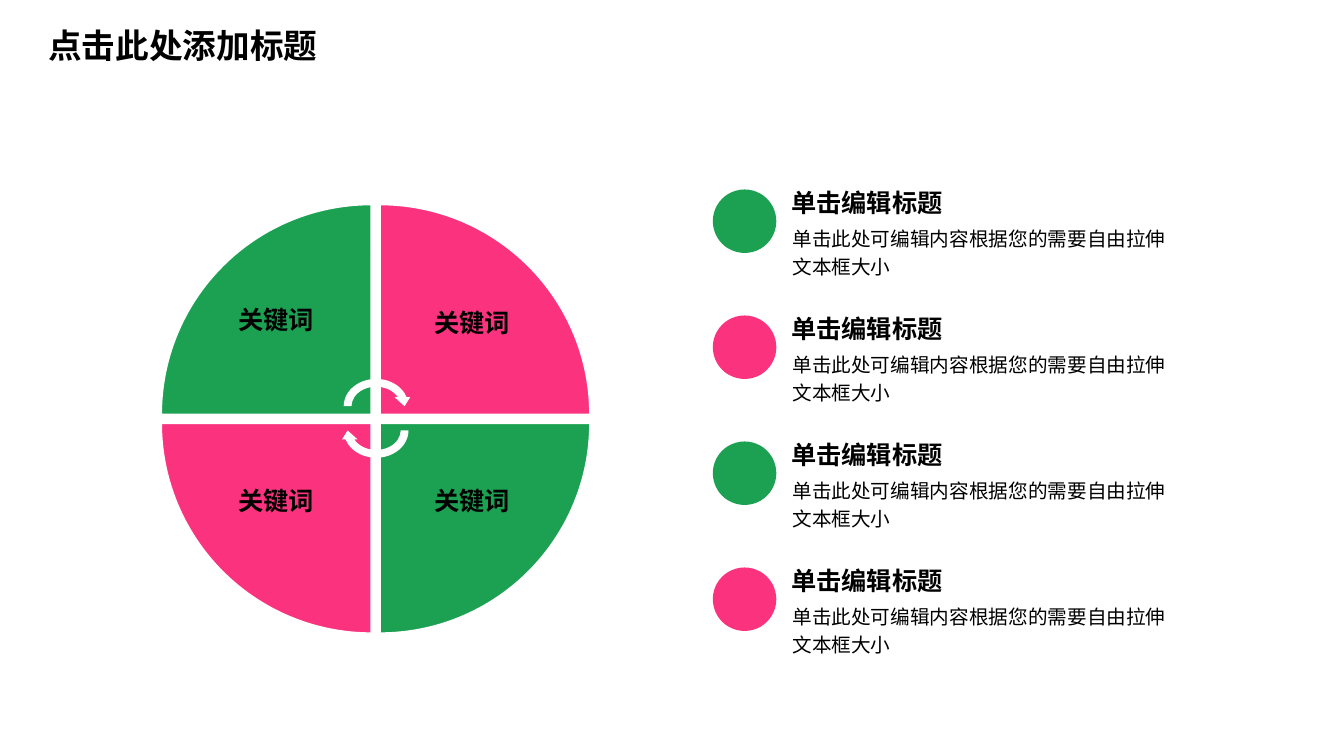
from dataclasses import dataclass
from math import cos, radians, sin, tan

from lxml import etree
from pptx import Presentation
from pptx import util as u
from pptx.dml.color import RGBColor
from pptx.enum import shapes, text
from pptx.oxml.ns import qn

GREEN = RGBColor(0x1B, 0xA1, 0x51)
PINK = RGBColor(0xFB, 0x33, 0x7F)
WHITE = RGBColor(0xFF, 0xFF, 0xFF)
BLACK = RGBColor(0, 0, 0)
FONT = "Noto Sans CJK SC"
RADIUS = 2.08


@dataclass
class Wedge:
    x: float
    y: float
    start: int
    color: RGBColor


@dataclass
class Label:
    x: float
    y: float


WEDGES = [
    Wedge(3.68, 4.11, 180, GREEN),
    Wedge(3.77, 4.11, 270, PINK),
    Wedge(3.77, 4.2, 0, GREEN),
    Wedge(3.68, 4.2, 90, PINK),
]
LABELS = [Label(3.93, 2.99), Label(1.99, 2.96), Label(3.93, 4.76), Label(1.99, 4.76)]


def write(shape, words: str, *, size: int, font: str = FONT, bold: bool = False,
          align=text.PP_ALIGN.LEFT, inset: bool = True,
          grow: bool = False, line: float = 1.0, before: float = 0, after: float = 0) -> None:
    frame = shape.text_frame
    frame.word_wrap = True
    frame.vertical_anchor = text.MSO_ANCHOR.TOP
    frame.auto_size = text.MSO_AUTO_SIZE.SHAPE_TO_FIT_TEXT if grow else text.MSO_AUTO_SIZE.NONE
    if not inset:
        frame.margin_left = frame.margin_right = frame.margin_top = frame.margin_bottom = 0
    para = frame.paragraphs[0]
    para.alignment = align
    para.line_spacing = line
    para.space_before, para.space_after = u.Pt(before), u.Pt(after)
    run = para.add_run()
    run.text = words
    run.font.size, run.font.bold, run.font.name = u.Pt(size), bold, font
    run.font.color.rgb = BLACK
    east = etree.SubElement(run.font._element, qn("a:ea"))
    east.set("typeface", FONT)


def box(slide, x: float, y: float, w: float, h: float, words: str, **style) -> None:
    write(slide.shapes.add_textbox(*map(u.Inches, (x, y, w, h))), words, **style)


def paint(shape, color: RGBColor) -> None:
    shape.shadow.inherit = False
    shape.fill.solid()
    shape.fill.fore_color.rgb = color
    shape.line.fill.background()


def spot(wedge: Wedge, angle: float, pull: float = 0) -> tuple[int, int]:
    a = radians(angle)
    return (u.Inches(wedge.x + RADIUS * (cos(a) - pull * sin(a))),
            u.Inches(wedge.y + RADIUS * (sin(a) + pull * cos(a))))


def curve(shape, count: int) -> None:
    lines = list(shape._element.iter(qn("a:lnTo")))
    for first in range(0, 3 * count, 3):
        trio = lines[first:first + 3]
        bend = etree.Element(qn("a:cubicBezTo"))
        trio[0].addprevious(bend)
        for part in trio:
            bend.append(part[0])
            part.getparent().remove(part)


def draw_wedge(slide, wedge: Wedge) -> None:
    pull = 4 / 3 * tan(radians(45 / 4))
    points = []
    for angle in (wedge.start, wedge.start + 45):
        points += [spot(wedge, angle, pull), spot(wedge, angle + 45, -pull),
                   spot(wedge, angle + 45)]
    points.append((u.Inches(wedge.x), u.Inches(wedge.y)))
    build = slide.shapes.build_freeform(*spot(wedge, wedge.start))
    build.add_line_segments(points, close=True)
    shape = build.convert_to_shape()
    curve(shape, 2)
    paint(shape, wedge.color)
    shape.line.color.rgb = WHITE
    shape.line.width = u.Pt(1)


def draw_arrows(slide) -> None:
    group = slide.shapes.add_group_shape()
    for y, turn in ((3.72, 0), (3.96, 180)):
        arrow = group.shapes.add_shape(shapes.MSO_SHAPE.CIRCULAR_ARROW,
                                       *map(u.Inches, (3.37, y, 0.72, 0.62)))
        arrow.rotation = turn
        paint(arrow, WHITE)


def draw_item(slide, y: float, color: RGBColor) -> None:
    dot = slide.shapes.add_shape(shapes.MSO_SHAPE.OVAL,
                                 *map(u.Inches, (7.07, y, 0.63, 0.63)))
    paint(dot, color)
    box(slide, 7.75, y - 0.07, 1.84, 0.4, "单击编辑标题", size=18, bold=True, grow=True)
    box(slide, 7.86, y + 0.32, 3.87, 0.55,
        "单击此处可编辑内容根据您的需要自由拉伸文本框大小",
        size=14, inset=False, line=1.2, after=6)


def main() -> None:
    deck = Presentation()
    deck.slide_width, deck.slide_height = u.Inches(13.33), u.Inches(7.5)
    slide = deck.slides.add_slide(deck.slide_layouts[5])
    title = slide.shapes.title
    title.left, title.top, title.width, title.height = map(u.Inches, (0.38, 0.2, 3.78, 0.5))
    write(title, "点击此处添加标题", size=24, bold=True, grow=True)
    for wedge in WEDGES:
        draw_wedge(slide, wedge)
    draw_arrows(slide)
    for row in range(4):
        draw_item(slide, 1.88 + 1.25 * row, (GREEN, PINK)[row % 2])
    for label in LABELS:
        box(slide, label.x, label.y, 1.5, 0.33, "关键词", size=18, font="Arial",
            bold=True, align=text.PP_ALIGN.CENTER, inset=False, grow=True,
            line=1.2, before=3.6)
    deck.save("out.pptx")


if __name__ == "__main__":
    main()
